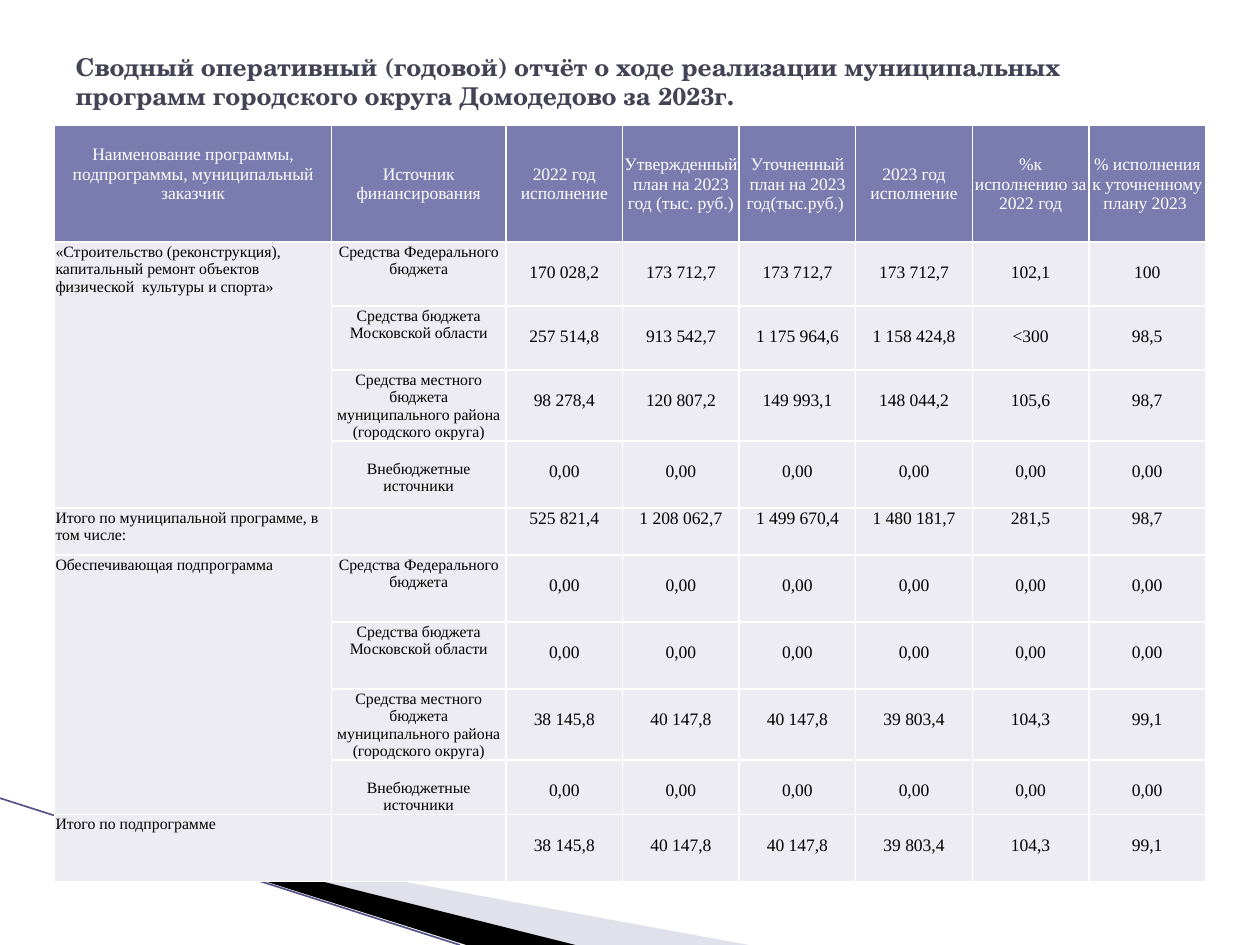
from lxml import etree
from pptx import Presentation
from pptx.dml.color import RGBColor
from pptx.enum.shapes import MSO_CONNECTOR
from pptx.enum.text import MSO_ANCHOR, PP_ALIGN
from pptx.oxml import parse_xml
from pptx.oxml.ns import nsdecls, qn
from pptx.util import Cm, Pt

LEFT, CENTER = PP_ALIGN.LEFT, PP_ALIGN.CENTER
TOP, MIDDLE = MSO_ANCHOR.TOP, MSO_ANCHOR.MIDDLE
STRAIGHT = MSO_CONNECTOR.STRAIGHT

TITLE = ("Сводный оперативный (годовой) отчёт о ходе реализации муниципальных "
         "программ городского округа Домодедово за 2023г.")
HEADERS = [
    "Наименование программы, подпрограммы, муниципальный заказчик",
    "Источник финансирования",
    "2022 год исполнение",
    "Утвержденный план на 2023 год (тыс. руб.)",
    "Уточненный план на 2023 год(тыс.руб.) ",
    "2023 год исполнение",
    "%к исполнению за 2022 год",
    "% исполнения к уточненному плану 2023 ",
]
FEDERAL = "Средства Федерального бюджета"
REGIONAL = "Средства бюджета Московской области"
LOCAL = "Средства местного бюджета муниципального района (городского округа)"
EXTRA = "Внебюджетные источники"
ZEROS = ["0,00"] * 6
SUBTOTAL = ["38 145,8", "40 147,8", "40 147,8", "39 803,4", "104,3", "99,1"]
ROWS = [
    ["«Строительство (реконструкция), капитальный ремонт объектов "
     "физической  культуры и спорта»", FEDERAL,
     "170 028,2", "173 712,7", "173 712,7", "173 712,7", "102,1", "100"],
    ["", REGIONAL, "257 514,8", "913 542,7", "1 175 964,6", "1 158 424,8", "<300", "98,5"],
    ["", LOCAL, "98 278,4", "120 807,2", "149 993,1", "148 044,2", "105,6", "98,7"],
    ["", EXTRA] + ZEROS,
    ["Итого по муниципальной программе, в том числе:", "",
     "525 821,4", "1 208 062,7", "1 499 670,4", "1 480 181,7", "281,5", "98,7"],
    ["Обеспечивающая подпрограмма", FEDERAL] + ZEROS,
    ["", REGIONAL] + ZEROS,
    ["", LOCAL] + SUBTOTAL,
    ["", EXTRA] + ZEROS,
    ["Итого по подпрограмме", ""] + SUBTOTAL,
]
COL_WIDTHS = [5.58, 3.52] + [2.35] * 6
ROW_HEIGHTS = [2.35, 1.29, 1.29, 1.43, 1.35, 0.95, 1.35, 1.35, 1.43, 1.07, 1.35]
TOTAL_ROW = 5
GROUP_STARTS = (1, 6)
INSET = 0.02
LINE_10 = 0.41
LINE_9 = 0.37


def color(value):
    return RGBColor.from_string(value)


class Deck:
    title_font = "TeX Gyre Schola"
    table_font = "Times New Roman"
    title_color = "424456"
    header_fill = "7A7BAE"
    body_fill = "ECECF2"
    border = "FFFFFF"

    def __init__(self, prs):
        self.slide = prs.slides.add_slide(prs.slide_layouts[5])

    def run(self, p, text, font, size, ink, bold=False):
        r = p.add_run()
        r.text = text
        r.font.name = font
        r.font.size = Pt(size)
        r.font.bold = bold
        r.font.color.rgb = color(ink)

    def title(self, text, x, y, w, h):
        sp = self.slide.shapes.title
        sp.left, sp.top, sp.width, sp.height = Cm(x), Cm(y), Cm(w), Cm(h)
        tf = sp.text_frame
        tf.word_wrap = True
        tf.vertical_anchor = MIDDLE
        p = tf.paragraphs[0]
        p.alignment = LEFT
        self.run(p, text, self.title_font, 14, self.title_color, True)

    def polygon(self, points, fill, alpha=None):
        pts = [(Cm(x), Cm(y)) for x, y in points]
        builder = self.slide.shapes.build_freeform(*pts[0])
        builder.add_line_segments(pts[1:], close=True)
        sp = builder.convert_to_shape()
        sp.shadow.inherit = False
        sp.fill.solid()
        sp.fill.fore_color.rgb = color(fill)
        sp.line.fill.background()
        if alpha is not None:
            clr = sp.fill._xPr.find(qn("a:solidFill"))[0]
            etree.SubElement(clr, qn("a:alpha")).set("val", str(alpha * 1000))

    def line(self, x1, y1, x2, y2, ink, width):
        cn = self.slide.shapes.add_connector(STRAIGHT, Cm(x1), Cm(y1), Cm(x2), Cm(y2))
        cn.line.color.rgb = color(ink)
        cn.line.width = Pt(width)
        etree.SubElement(cn._element.spPr, qn("a:effectLst"))

    def cell(self, cell, text, size, ink, fill, align, anchor, top=INSET, bottom=0):
        cell.margin_left = cell.margin_right = Cm(INSET)
        cell.margin_top, cell.margin_bottom = Cm(top), Cm(bottom)
        cell.vertical_anchor = anchor
        cell.fill.solid()
        cell.fill.fore_color.rgb = color(fill)
        tcPr = cell._tc.get_or_add_tcPr()
        for i, side in enumerate("LRTB"):
            tcPr.insert(i, parse_xml(
                f'<a:ln{side} {nsdecls("a")} w="12700"><a:solidFill>'
                f'<a:srgbClr val="{self.border}"/></a:solidFill></a:ln{side}>'))
        p = cell.text_frame.paragraphs[0]
        p.alignment = align
        if text:
            self.run(p, text, self.table_font, size, ink)
        else:
            p.font.size = Pt(size)

    def table(self, x, y):
        frame = self.slide.shapes.add_table(
            len(ROW_HEIGHTS), len(COL_WIDTHS), Cm(x), Cm(y),
            Cm(sum(COL_WIDTHS)), Cm(sum(ROW_HEIGHTS)))
        tbl = frame.table
        tbl.horz_banding = False
        for col, width in zip(tbl.columns, COL_WIDTHS):
            col.width = Cm(width)
        for row, height in zip(tbl.rows, ROW_HEIGHTS):
            row.height = Cm(height)
        for c, text in enumerate(HEADERS):
            self.cell(tbl.cell(0, c), text, 10, "FFFFFF", self.header_fill, CENTER,
                      MIDDLE, bottom=LINE_10 if c == 0 else 0)
        for r, values in enumerate(ROWS, 1):
            for c, text in enumerate(values):
                top = INSET
                if c > 1 and r != TOTAL_ROW:
                    top += LINE_10
                elif text == EXTRA:
                    top += LINE_9
                self.cell(tbl.cell(r, c), text, 10 if c > 1 else 9, "000000",
                          self.body_fill, CENTER if c else LEFT, TOP, top)
        for start in GROUP_STARTS:
            tbl.cell(start, 0).merge(tbl.cell(start + 3, 0))


def main():
    prs = Presentation()
    prs.slide_width, prs.slide_height = Cm(25.4), Cm(19.05)
    deck = Deck(prs)
    deck.polygon([(1.4, 16.54), (15.1, 19.05), (11.58, 19.05), (1.4, 16.51)], "B6B6D1", 40)
    deck.polygon([(1.35, 16.48), (11.6, 19.05), (9.4, 19.05), (1.37, 16.51)], "000000")
    deck.line(0, 16.09, 9.27, 19.05, "53548A", 0.95)
    deck.title(TITLE, 1.27, 0.76, 22.86, 1.75)
    deck.table(1.1, 2.53)
    prs.save("out.pptx")


if __name__ == "__main__":
    main()
